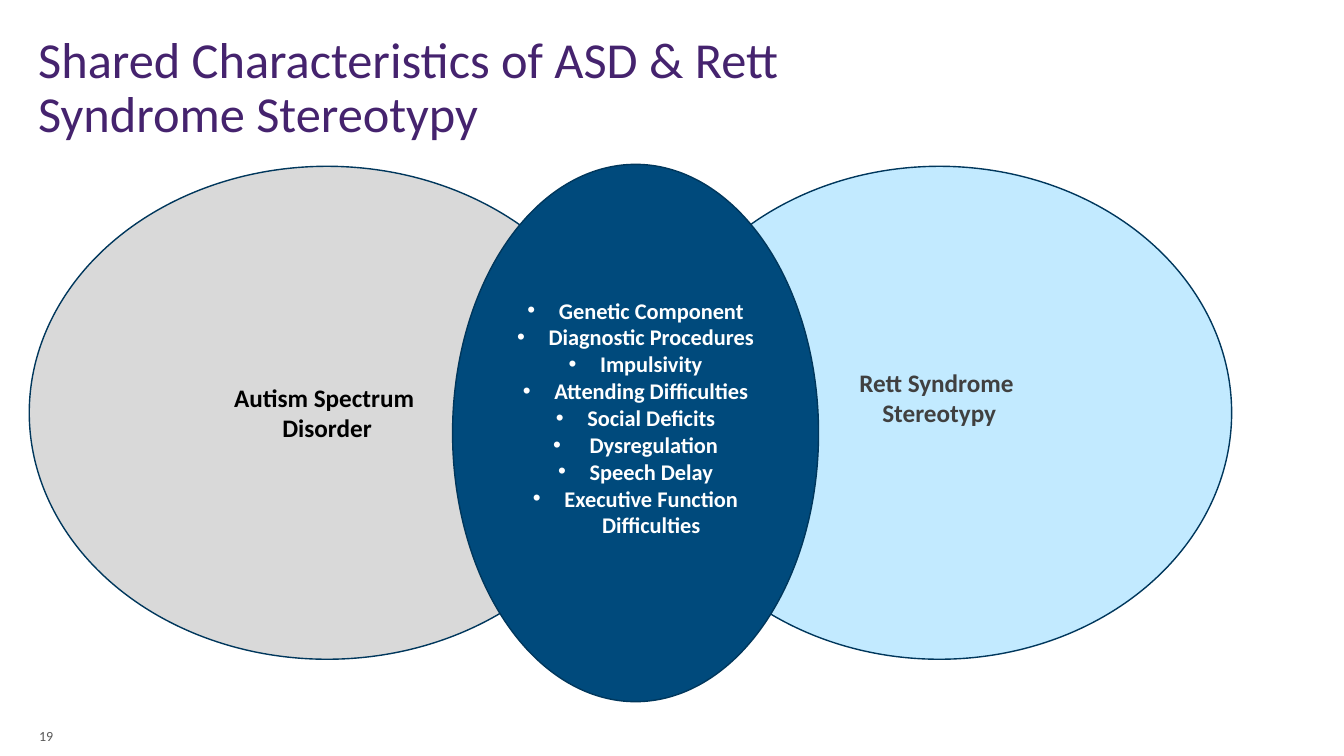
"""Build the slide that compares ASD and Rett Syndrome Stereotypy."""
from dataclasses import dataclass

from lxml.etree import SubElement
from pptx import Presentation
from pptx.dml.color import RGBColor
from pptx.enum.shapes import MSO_SHAPE
from pptx.enum.text import MSO_ANCHOR, PP_ALIGN
from pptx.oxml.ns import qn
from pptx.util import Pt


@dataclass
class Label:
    text: str
    box: tuple[float, float, float, float]
    size: float
    color: str
    anchor: MSO_ANCHOR
    space: float = 1.0


@dataclass
class Oval:
    lines: list[str]
    box: tuple[float, float, float, float]
    fill: str
    color: str
    size: float
    foot: float = 3.6
    dots: bool = False


LABELS = [
    Label("Shared Characteristics of ASD & Rett Syndrome Stereotypy",
          (20.2, 15.1, 694.1, 97.2), 36, "45236E", MSO_ANCHOR.MIDDLE, 0.9),
    Label("19", (20.9, 506.2, 42.5, 28.8), 10, "595959", MSO_ANCHOR.BOTTOM),
]

OVALS = [
    Oval(["Autism Spectrum ", "Disorder"],
         (20.9, 118.8, 425.5, 352.1), "D9D9D9", "000000", 18),
    Oval(["Rett Syndrome ", "Stereotypy"],
         (462.2, 118.8, 417.6, 352.1), "C2EAFF", "404040", 18, foot=25.6),
    Oval(["Genetic Component", "Diagnostic Procedures", "Impulsivity",
          "Attending Difficulties", "Social Deficits", " Dysregulation",
          "Speech Delay", "Executive Function Difficulties"],
         (323.3, 117.4, 261.4, 383.8), "004A7C", "FFFFFF", 16,
         foot=25.6, dots=True),
]


def paint(target, color: str) -> None:
    """Give a fill or font its solid colour."""
    if hasattr(target, "solid"):
        target.solid()
        target.fore_color.rgb = RGBColor.from_string(color)
    else:
        target.color.rgb = RGBColor.from_string(color)


def style(para, size: float, color: str, bold: bool) -> None:
    """Format every run of a paragraph."""
    for run in para.runs:
        run.font.name = "Calibri"
        run.font.size = Pt(size)
        run.font.bold = bold
        paint(run.font, color)


def add_dot(para) -> None:
    """Give a paragraph a hanging bullet."""
    props = para._p.get_or_add_pPr()
    props.set("marL", str(Pt(22.5)))
    props.set("indent", str(Pt(-22.5)))
    SubElement(props, qn("a:buFont")).set("typeface", "Arial")
    SubElement(props, qn("a:buChar")).set("char", "•")


def draw_label(slide, label: Label) -> None:
    """Draw a plain text box."""
    frame = slide.shapes.add_textbox(*map(Pt, label.box)).text_frame
    frame.word_wrap = True
    frame.vertical_anchor = label.anchor
    frame.text = label.text
    para = frame.paragraphs[0]
    para.line_spacing = label.space
    style(para, label.size, label.color, False)


def draw_oval(slide, oval: Oval) -> None:
    """Draw one ellipse with its centred lines."""
    shape = slide.shapes.add_shape(MSO_SHAPE.OVAL, *map(Pt, oval.box))
    shape.shadow.inherit = False
    paint(shape.fill, oval.fill)
    paint(shape.line.fill, "00375C")
    shape.line.width = Pt(1)
    frame = shape.text_frame
    frame.word_wrap = True
    frame.vertical_anchor = MSO_ANCHOR.MIDDLE
    frame.margin_bottom = Pt(oval.foot)
    frame.text = "\n".join(oval.lines)
    for para in frame.paragraphs:
        para.alignment = PP_ALIGN.CENTER
        if oval.dots:
            add_dot(para)
        style(para, oval.size, oval.color, True)


def main() -> None:
    """Build and save the deck."""
    deck = Presentation()
    deck.slide_width, deck.slide_height = Pt(960), Pt(540)
    slide = deck.slides.add_slide(deck.slide_layouts[6])
    for label in LABELS:
        draw_label(slide, label)
    for oval in OVALS:
        draw_oval(slide, oval)
    deck.save("out.pptx")


if __name__ == "__main__":
    main()
